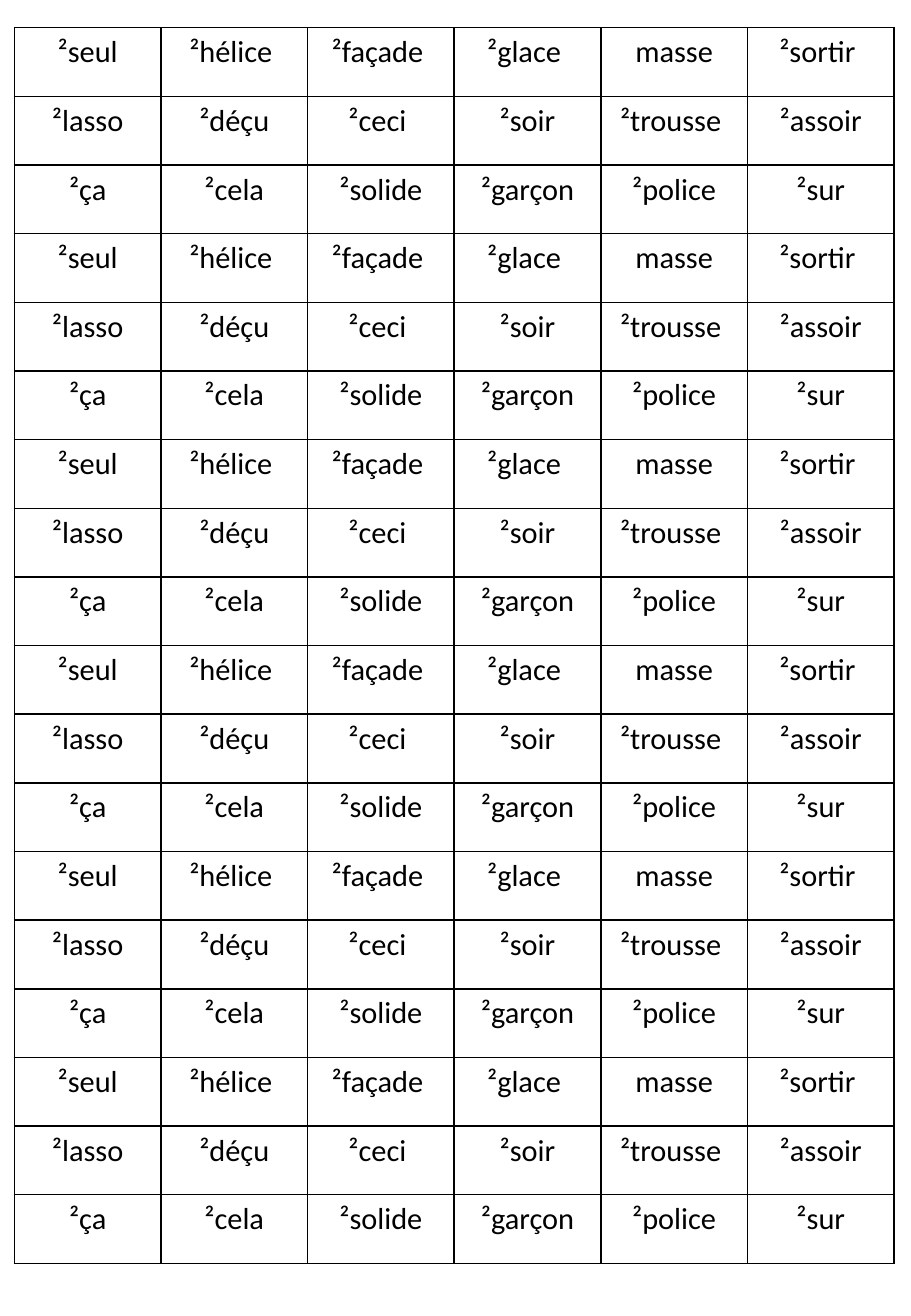
from dataclasses import dataclass

from lxml import etree
from pptx import Presentation
from pptx.dml.color import RGBColor
from pptx.enum.text import MSO_ANCHOR, PP_ALIGN
from pptx.oxml.ns import qn
from pptx.util import Cm, Pt

CENTER = PP_ALIGN.CENTER
TOP = MSO_ANCHOR.TOP
BLANK_LAYOUT = 6
BORDER_SIDES = ("a:lnL", "a:lnR", "a:lnT", "a:lnB")


@dataclass(frozen=True)
class Theme:
    """Colours, font and sizes of the word sheet."""
    ink: str = "000000"
    font: str = "Calibri"
    word_size: int = Pt(18)
    border_width: int = Pt(1)


THEME = Theme()
WORD_SET = (
    ("²seul", "²hélice ", "²façade ", "²glace ", "masse", "²sortir "),
    ("²lasso", "²déçu", "²ceci ", "²soir", "²trousse ", "²assoir"),
    ("²ça", "²cela", "²solide", "²garçon", "²police", "²sur"),
)
SET_COUNT = 6


def draw_borders(cell):
    """Draw a solid line on the four sides of a cell."""
    properties = cell._tc.get_or_add_tcPr()
    for side in BORDER_SIDES:
        line = etree.SubElement(properties, qn(side), w=str(THEME.border_width))
        fill = etree.SubElement(line, qn("a:solidFill"))
        etree.SubElement(fill, qn("a:srgbClr"), val=THEME.ink)


def write_word(cell, word):
    """Write one word centred at the top of a bordered, unfilled cell."""
    draw_borders(cell)
    cell.fill.background()
    cell.vertical_anchor = TOP
    paragraph = cell.text_frame.paragraphs[0]
    paragraph.alignment = CENTER
    run = paragraph.add_run()
    run.text = word
    run.font.name = THEME.font
    run.font.size = THEME.word_size
    run.font.color.rgb = RGBColor.from_string(THEME.ink)


def add_word_sheet(slide, left, top, width, height):
    """Fill the given box with the word set, repeated down the page."""
    word_rows = WORD_SET * SET_COUNT
    row_count, column_count = len(word_rows), len(WORD_SET[0])
    sheet = slide.shapes.add_table(
        row_count, column_count, left, top, width, height).table
    sheet.first_row = False
    sheet.horz_banding = False
    for column in sheet.columns:
        column.width = width // column_count
    for row in sheet.rows:
        row.height = height // row_count
    for row_index, words in enumerate(word_rows):
        for column_index, word in enumerate(words):
            write_word(sheet.cell(row_index, column_index), word)


def main():
    """Build the one-page word sheet."""
    presentation = Presentation()
    presentation.slide_width = Cm(19.05)
    presentation.slide_height = Cm(27.51)
    slide = presentation.slides.add_slide(presentation.slide_layouts[BLANK_LAYOUT])
    add_word_sheet(slide, Cm(0.3), Cm(0.58), Cm(18.4), Cm(25.83))
    presentation.save("out.pptx")


if __name__ == "__main__":
    main()
